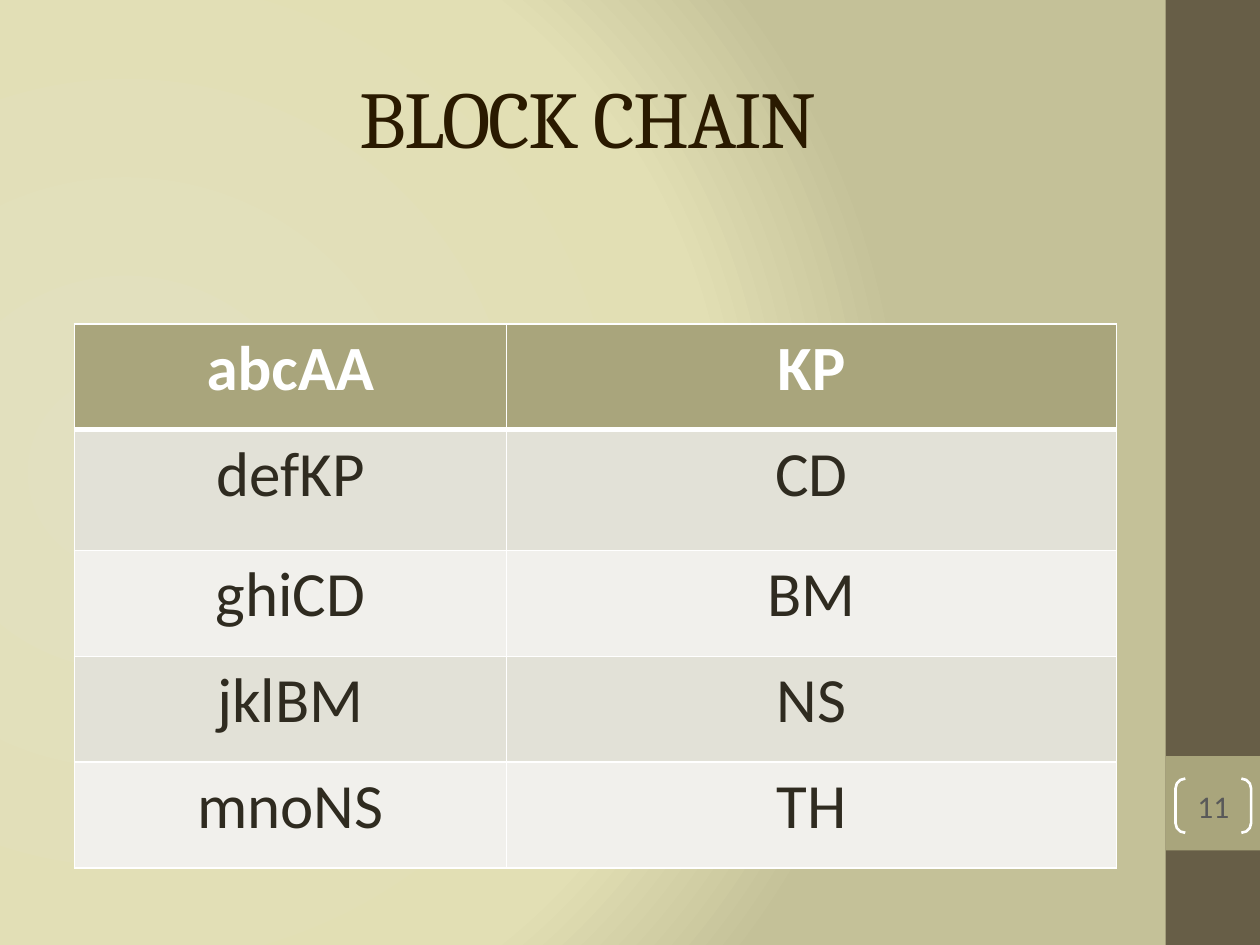
from dataclasses import dataclass

from lxml import etree
from pptx import Presentation
from pptx.dml.color import RGBColor
from pptx.enum.shapes import MSO_SHAPE
from pptx.enum.text import MSO_ANCHOR, PP_ALIGN
from pptx.oxml import parse_xml
from pptx.oxml.ns import nsdecls, qn
from pptx.util import Inches, Pt

RECTANGLE, BRACKETS = MSO_SHAPE.RECTANGLE, MSO_SHAPE.DOUBLE_BRACKET
CENTER, MIDDLE = PP_ALIGN.CENTER, MSO_ANCHOR.MIDDLE
TITLE_ONLY = 5
COLUMNS, ROWS = 100, 75  # grid units across and down the slide


@dataclass(frozen=True)
class Theme:
    background: tuple = ((0, "E2E0C0"), (75, "E2DFB4"), (100, "C4C198"))
    sidebar: str = "675E47"
    accent: str = "A9A57C"
    bands: tuple = ("E2E1D7", "F1F0EC")
    white: str = "FFFFFF"
    title: dict = None
    header: dict = None
    body: dict = None
    number: dict = None


def font(name, size, color, bold=False):
    return {"name": name, "size": Pt(size), "bold": bold, "color": color}


THEME = Theme(
    title=font("Cambria", 46, "2A1A00"),
    header=font("Calibri", 36, "FFFFFF", True),
    body=font("Calibri", 36, "2F2B20"),
    number=font("Calibri", 18, "595959"),
)


class SlideBuilder:
    def __init__(self, presentation, theme):
        self.theme = theme
        self.unit_x = presentation.slide_width / COLUMNS
        self.unit_y = presentation.slide_height / ROWS
        self.slide = presentation.slides.add_slide(presentation.slide_layouts[TITLE_ONLY])

    def box(self, left, top, width, height):
        return (round(left * self.unit_x), round(top * self.unit_y),
                round(width * self.unit_x), round(height * self.unit_y))

    def add_text(self, text_frame, text, style):
        paragraph = text_frame.paragraphs[0]
        paragraph.alignment = CENTER
        run = paragraph.add_run()
        run.text = text
        for name, value in style.items():
            if name == "color":
                run.font.color.rgb = RGBColor.from_string(value)
            else:
                setattr(run.font, name, value)
        return run

    def background(self):
        self.slide.background.fill.solid()
        properties = self.slide.element.find(".//" + qn("p:bgPr"))
        stops = "".join(
            f'<a:gs pos="{position * 1000}"><a:srgbClr val="{color}"/></a:gs>'
            for position, color in self.theme.background)
        properties[0] = parse_xml(
            f'<a:gradFill {nsdecls("a")} rotWithShape="1"><a:gsLst>{stops}</a:gsLst>'
            '<a:path path="circle"><a:fillToRect l="20000" t="50000" r="100000" b="50000"/>'
            '</a:path></a:gradFill>')

    def title(self, text, place):
        title = self.slide.shapes.title
        title.left, title.top, title.width, title.height = self.box(*place)
        title.text_frame.vertical_anchor = MIDDLE
        run = self.add_text(title.text_frame, text, self.theme.title)
        run.font._element.set("spc", "-100")

    def shape(self, kind, place, fill=None, line=None):
        shape = self.slide.shapes.add_shape(kind, *self.box(*place))
        shape.shadow.inherit = False
        if fill:
            shape.fill.solid()
            shape.fill.fore_color.rgb = RGBColor.from_string(fill)
        else:
            shape.fill.background()
        if line:
            shape.line.color.rgb = RGBColor.from_string(line)
            shape.line.width = Pt(1.5)
        else:
            shape.line.fill.background()
        return shape

    def slide_number(self, text, place):
        brackets = self.shape(BRACKETS, place, line=self.theme.white)
        brackets.adjustments[0] = 0.18
        frame = brackets.text_frame
        margins = dict.fromkeys(("margin_left", "margin_top", "margin_right", "margin_bottom"), 0)
        for name, value in {**margins, "vertical_anchor": MIDDLE}.items():
            setattr(frame, name, value)
        self.add_text(frame, text, self.theme.number)

    def borders(self, cell, **widths):
        properties = cell._tc.get_or_add_tcPr()
        for side in "LRTB":
            line = etree.SubElement(properties, qn(f"a:ln{side}"), w=str(Pt(widths.get(side, 1))))
            fill = etree.SubElement(line, qn("a:solidFill"))
            etree.SubElement(fill, qn("a:srgbClr"), val=self.theme.white)

    def table(self, records, left, top, widths, heights):
        place = self.box(left, top, sum(widths), sum(heights))
        table = self.slide.shapes.add_table(len(records), len(widths), *place).table
        for column, width in zip(table.columns, widths):
            column.width = round(width * self.unit_x)
        for index, (row, height, record) in enumerate(zip(table.rows, heights, records)):
            row.height = round(height * self.unit_y)
            is_header = index == 0
            fill = self.theme.accent if is_header else self.theme.bands[(index - 1) % 2]
            style = self.theme.header if is_header else self.theme.body
            for cell, text in zip(row.cells, record):
                # The header is set off by a heavier rule
                self.borders(cell, T=3 if index == 1 else 1, B=3 if is_header else 1)
                cell.fill.solid()
                cell.fill.fore_color.rgb = RGBColor.from_string(fill)
                self.add_text(cell.text_frame, text, style)


def main():
    presentation = Presentation()
    presentation.slide_width, presentation.slide_height = Inches(10), Inches(7.5)
    builder = SlideBuilder(presentation, THEME)

    # Background and sidebar
    builder.background()
    builder.shape(RECTANGLE, (92.5, 0, 7.5, ROWS), fill=THEME.sidebar)
    builder.shape(RECTANGLE, (92.5, 60, 7.5, 7.5), fill=THEME.accent)

    # Title and chain of blocks
    builder.title("BLOCK CHAIN", (5, 3, 83.3, 12.5))
    chain = [("abcAA", "KP"), ("defKP", "CD"), ("ghiCD", "BM"), ("jklBM", "NS"), ("mnoNS", "TH")]
    builder.table(chain, 5.9, 25.7, widths=(34.3, 48.4), heights=(8.4, 9.6, 8.4, 8.4, 8.4))

    # Slide number
    builder.slide_number("11", (93.3, 61.8, 6, 4.3))
    presentation.save("out.pptx")


if __name__ == "__main__":
    main()
